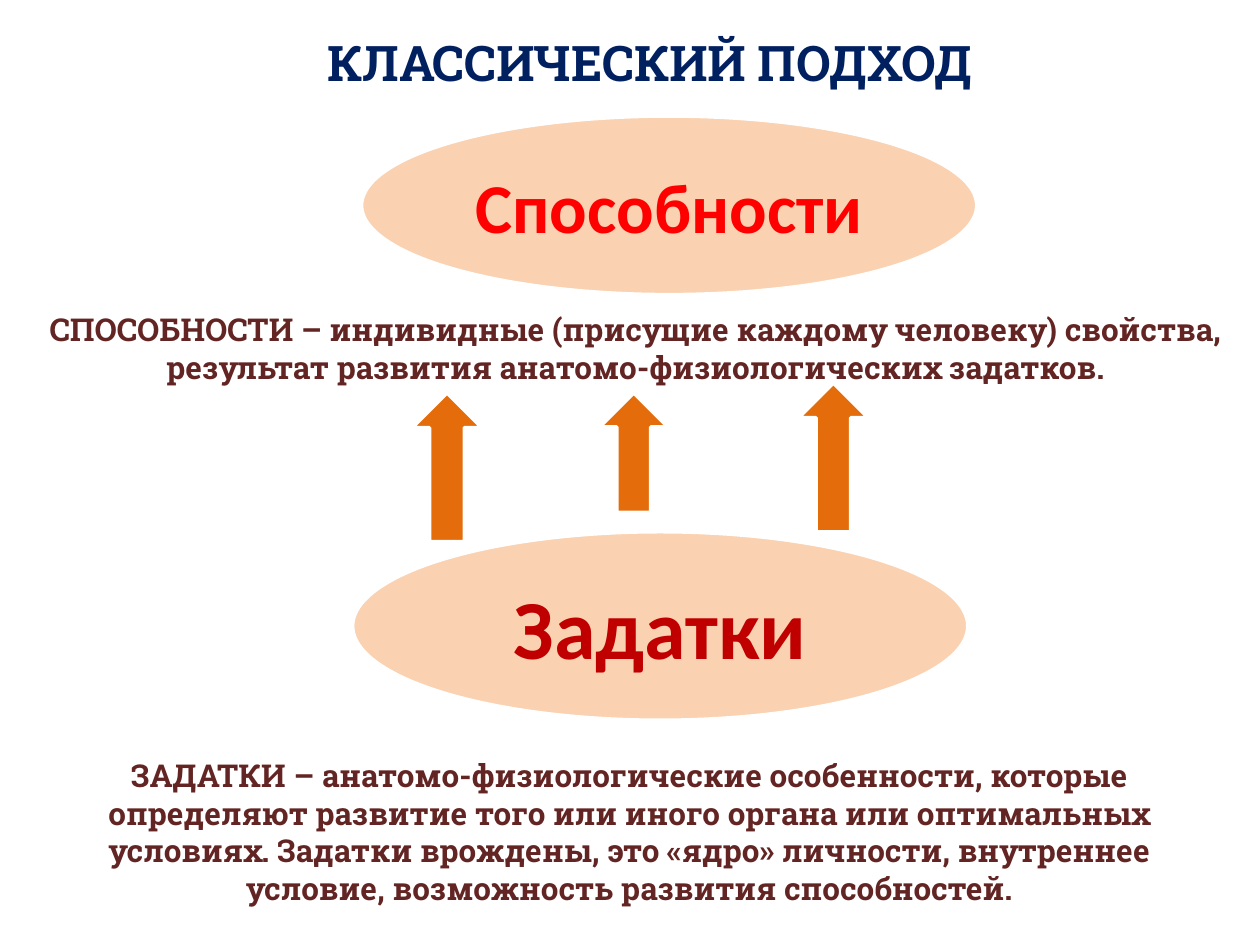
from lxml.etree import SubElement
from pptx import Presentation
from pptx.dml.color import RGBColor
from pptx.enum.shapes import MSO_SHAPE as Preset
from pptx.enum.text import MSO_ANCHOR as Anchor, MSO_AUTO_SIZE as AutoSize, PP_ALIGN as Align
from pptx.oxml.ns import qn
from pptx.util import Cm, Pt

COLOURS = {
    "title": "002060", "definition": "632523", "oval": "FAC090", "arrow": "E46C0A",
    "outline": "FFFFFF", "abilities": "FF0000", "inclinations": "C00000",
}

# Content: words, colour key, size in points, (left, top, width, height) in cm
CONCEPTS = [
    ("Способности", "abilities", 40, (7.29, 2.34, 12.4, 3.6)),
    ("Задатки", "inclinations", 48, (7.11, 10.72, 12.4, 3.8)),
]
PASSAGES = [
    ("КЛАССИЧЕСКИЙ ПОДХОД", "title", 28, (3.91, 0.53, 18.39, 1.45)),
    ("СПОСОБНОСТИ – индивидные (присущие каждому человеку) свойства, "
     "результат развития анатомо-физиологических задатков.",
     "definition", 18, (0.71, 6.12, 24.21, 1.8)),
    ("ЗАДАТКИ – анатомо-физиологические особенности, которые определяют "
     "развитие того или иного органа или оптимальных условиях. Задатки врождены, "
     "это «ядро» личности, внутреннее условие, возможность развития способностей.",
     "definition", 18, (0.89, 15.11, 23.6, 3.33)),
]
ARROWS = [(8.31, 7.92, 1.4, 3), (16.1, 7.72, 1.4, 3), (12.09, 7.92, 1.37, 2.41)]
OVAL_OPACITY = 70


def colour(key):
    return RGBColor.from_string(COLOURS[key])


def write(frame, words, key, size, font_name):
    frame.word_wrap = True
    paragraph = frame.paragraphs[0]
    paragraph.alignment = Align.CENTER
    run = paragraph.add_run()
    run.text = words
    run.font.name, run.font.size, run.font.bold = font_name, Pt(size), True
    run.font.color.rgb = colour(key)


def add_figure(slide, preset, box, fill):
    figure = slide.shapes.add_shape(preset, *map(Cm, box))
    figure.shadow.inherit = False
    figure.fill.solid()
    figure.fill.fore_color.rgb = colour(fill)
    figure.line.color.rgb = colour("outline")
    figure.line.width = Pt(2)
    return figure


def add_concept(slide, words, key, size, box):
    oval = add_figure(slide, Preset.OVAL, box, "oval")
    # Let the background show through the fill
    tint = oval.fill._xPr.find(qn("a:solidFill")).find(qn("a:srgbClr"))
    SubElement(tint, qn("a:alpha")).set("val", str(OVAL_OPACITY * 1000))
    oval.text_frame.vertical_anchor = Anchor.MIDDLE
    write(oval.text_frame, words, key, size, "Calibri")


def add_passage(slide, words, key, size, box):
    passage = slide.shapes.add_textbox(*map(Cm, box))
    passage.text_frame.auto_size = AutoSize.SHAPE_TO_FIT_TEXT
    write(passage.text_frame, words, key, size, "Roboto Slab")


def main():
    deck = Presentation()
    deck.slide_width, deck.slide_height = Cm(25.4), Cm(19.05)
    slide = deck.slides.add_slide(deck.slide_layouts[6])

    # Title, concepts and their definitions, from top to bottom
    for concept in CONCEPTS:
        add_concept(slide, *concept)
    for passage in PASSAGES:
        add_passage(slide, *passage)

    # Arrows rising from inclinations to abilities
    for box in ARROWS:
        add_figure(slide, Preset.DOWN_ARROW, box, "arrow").rotation = 180

    deck.save("out.pptx")


if __name__ == "__main__":
    main()
